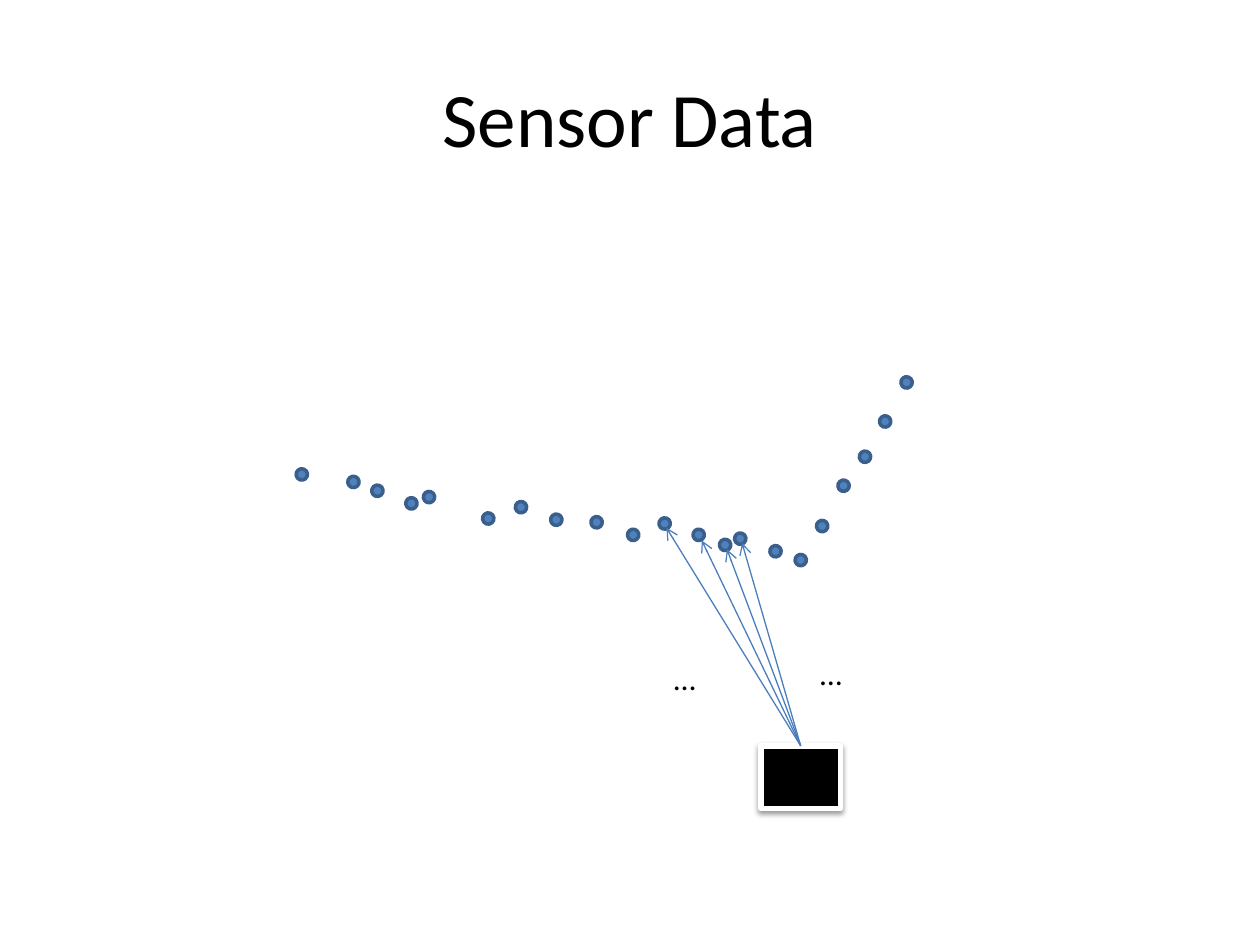
from pptx import Presentation
from pptx import util as u
from pptx.dml.color import RGBColor
from pptx.enum import shapes, text
from pptx.oxml import ns
from lxml import etree

BLACK = RGBColor(0, 0, 0)
WHITE = RGBColor(255, 255, 255)
BLUE = RGBColor(0x4F, 0x81, 0xBD)
RIM = RGBColor(0x3A, 0x5F, 0x8C)
RAY = RGBColor(0x4B, 0x7E, 0xBC)
DOT = 0.09
TILT = 19.9

DOTS = [
    (4.09, 3.98), (4.69, 4.1), (4.37, 4.08), (4.98, 4.2), (5.23, 4.11),
    (5.83, 4.23), (5.5, 4.2), (6.11, 4.33), (3.22, 3.95), (3.83, 4.07),
    (2.76, 3.78), (3.36, 3.9), (2.35, 3.72), (2.95, 3.85), (5.71, 4.28),
    (6.31, 4.4), (6.65, 3.81), (6.48, 4.13), (6.82, 3.58), (7.15, 2.99),
    (6.98, 3.3),
]
HITS = [(5.29, 4.19), (5.57, 4.29), (5.77, 4.36), (5.89, 4.31)]


def add(parent, tag, **attrs):
    return etree.SubElement(parent, ns.qn(tag), attrs)


class Sketch:
    font = "Calibri"

    def __init__(self, slide):
        self.slide = slide

    def label(self, words, box, size, wrap=False):
        frame = self.slide.shapes.add_textbox(*map(u.Inches, box)).text_frame
        frame.word_wrap = wrap
        frame.text = words
        font = frame.paragraphs[0].runs[0].font
        font.name = self.font
        font.size = u.Pt(size)
        font.color.rgb = BLACK
        return frame

    def title(self, words, box):
        frame = self.label(words, box, 44, wrap=True)
        frame.vertical_anchor = text.MSO_ANCHOR.MIDDLE
        frame.paragraphs[0].alignment = text.PP_ALIGN.CENTER

    def shape(self, home, kind, box, fill, rim, width):
        item = home.shapes.add_shape(kind, *map(u.Inches, box))
        item.shadow.inherit = False
        item.fill.solid()
        item.fill.fore_color.rgb = fill
        item.line.color.rgb = rim
        item.line.width = u.Pt(width)
        return item

    def dots(self, spots):
        group = self.slide.shapes.add_group_shape()
        for left, top in spots:
            dot = self.shape(group, shapes.MSO_SHAPE.OVAL,
                             (left, top, DOT, DOT), BLUE, RIM, 2)
            dot.rotation = TILT

    def sensor(self, box):
        item = self.shape(self.slide, shapes.MSO_SHAPE.RECTANGLE,
                          box, BLACK, WHITE, 3)
        effect = item._element.spPr.find(ns.qn("a:effectLst"))
        shade = add(effect, "a:outerShdw", blurRad=str(u.Pt(3.1)),
                    dist=str(u.Pt(1.6)), dir="5400000", rotWithShape="0")
        tone = add(shade, "a:srgbClr", val=str(BLACK))
        add(tone, "a:alpha", val="38000")
        return item

    def ray(self, start, end):
        x, y = map(u.Inches, end)
        line = self.slide.shapes.add_connector(
            shapes.MSO_CONNECTOR.STRAIGHT, x, y, x, y)
        line.begin_connect(start, 0)
        line.line.color.rgb = RAY
        line.line.width = u.Pt(0.75)
        props = line._element.spPr
        add(props.find(ns.qn("a:ln")), "a:tailEnd", type="arrow")
        add(props, "a:effectLst")


def main():
    deck = Presentation()
    deck.slide_width = u.Inches(10)
    deck.slide_height = u.Inches(7.5)
    sketch = Sketch(deck.slides.add_slide(deck.slide_layouts[6]))
    sketch.title("Sensor Data", (0.5, 0.3, 9, 1.25))
    sketch.dots(DOTS)
    sensor = sketch.sensor((6.04, 5.92, 0.63, 0.5))
    for hit in HITS:
        sketch.ray(sensor, hit)
    for left, top in [(6.41, 5.14), (5.25, 5.18)]:
        sketch.label("…", (left, top, 0.45, 0.4), 18)
    deck.save("out.pptx")


if __name__ == "__main__":
    main()
